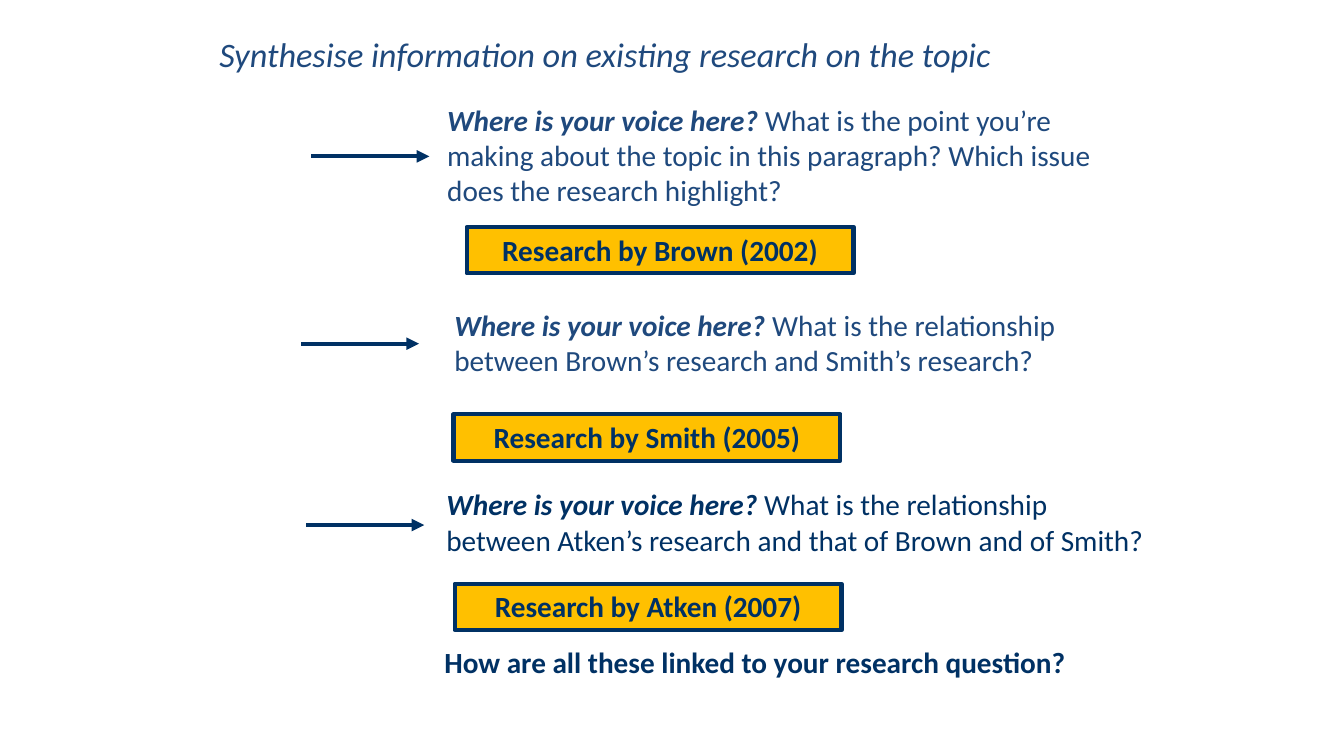
from lxml import etree
from pptx import Presentation
from pptx.dml.color import RGBColor
from pptx.enum.shapes import MSO_CONNECTOR as LINE, MSO_SHAPE as SHAPE
from pptx.enum.text import MSO_ANCHOR as ANCHOR, PP_ALIGN as ALIGN
from pptx.oxml.ns import qn
from pptx.util import Cm, Pt

COLOURS = {"navy": "003164", "blue": "1F497D", "gold": "FFC000"}
FONT = "Calibri"
BODY_SIZE = 20.9
TITLE_SIZE = 24.5
VOICE = "Where is your voice here?"

# left, top, width, height, colour, question
VOICE_PROMPTS = [
    (11.02, 2.46, 17.81, 2.95, "blue",
     " What is the point you’re making about the topic in this paragraph? "
     "Which issue does the research highlight?"),
    (11.2, 7.62, 18.24, 2.06, "blue",
     " What is the relationship between Brown’s research and Smith’s research?"),
    (11, 12.14, 18.24, 2.06, "navy",
     " What is the relationship between Atken’s research and that of Brown "
     "and of Smith?"),
]
# left, top, label
STUDIES = [
    (11.76, 5.72, "Research by Brown (2002)"),
    (11.43, 10.44, "Research by Smith (2005)"),
    (11.46, 14.71, "Research by Atken (2007)"),
]
ARROW_STARTS = [(7.85, 3.94), (7.59, 8.66), (7.72, 13.23)]
ARROW_LENGTH = 2.97


def rgb(name):
    return RGBColor.from_string(COLOURS[name])


def add_run(p, text, colour, size=BODY_SIZE, bold=False, italic=False):
    r = p.add_run()
    r.text = text
    r.font.name = FONT
    r.font.size = Pt(size)
    r.font.bold = bold
    r.font.italic = italic
    r.font.color.rgb = rgb(colour)


def add_text(slide, left, top, width, height):
    """Add a wrapping text box and return its first paragraph."""
    sp = slide.shapes.add_textbox(Cm(left), Cm(top), Cm(width), Cm(height))
    sp.text_frame.word_wrap = True
    return sp.text_frame.paragraphs[0]


def add_study(slide, left, top, label):
    sp = slide.shapes.add_shape(
        SHAPE.RECTANGLE, Cm(left), Cm(top), Cm(9.75), Cm(1.17))
    sp.shadow.inherit = False
    sp.fill.solid()
    sp.fill.fore_color.rgb = rgb("gold")
    sp.line.color.rgb = rgb("navy")
    sp.line.width = Pt(3)
    tf = sp.text_frame
    tf.word_wrap = True
    tf.vertical_anchor = ANCHOR.TOP
    p = tf.paragraphs[0]
    p.alignment = ALIGN.CENTER
    add_run(p, label, "navy", bold=True)


def add_arrow(slide, left, y):
    arrow = slide.shapes.add_connector(
        LINE.STRAIGHT, Cm(left), Cm(y), Cm(left + ARROW_LENGTH), Cm(y))
    arrow.line.color.rgb = rgb("navy")
    arrow.line.width = Pt(3)
    etree.SubElement(arrow.line._get_or_add_ln(), qn("a:tailEnd"), type="triangle")
    etree.SubElement(arrow._element.spPr, qn("a:effectLst"))


def main():
    prs = Presentation()
    prs.slide_width, prs.slide_height = Cm(33.87), Cm(19.05)
    slide = prs.slides.add_slide(prs.slide_layouts[6])

    p = add_text(slide, 5.28, 0.71, 23.55, 1.32)
    add_run(p, "Synthesise information on existing research on the topic",
            "blue", size=TITLE_SIZE, italic=True)

    for study in STUDIES:
        add_study(slide, *study)
    for start in ARROW_STARTS:
        add_arrow(slide, *start)
    for *box, colour, question in VOICE_PROMPTS:
        p = add_text(slide, *box)
        add_run(p, VOICE, colour, bold=True, italic=True)
        add_run(p, question, colour)

    p = add_text(slide, 10.95, 16.1, 18.87, 1.17)
    add_run(p, "How are all these linked to your research question?",
            "navy", bold=True)

    prs.save("out.pptx")


if __name__ == "__main__":
    main()
